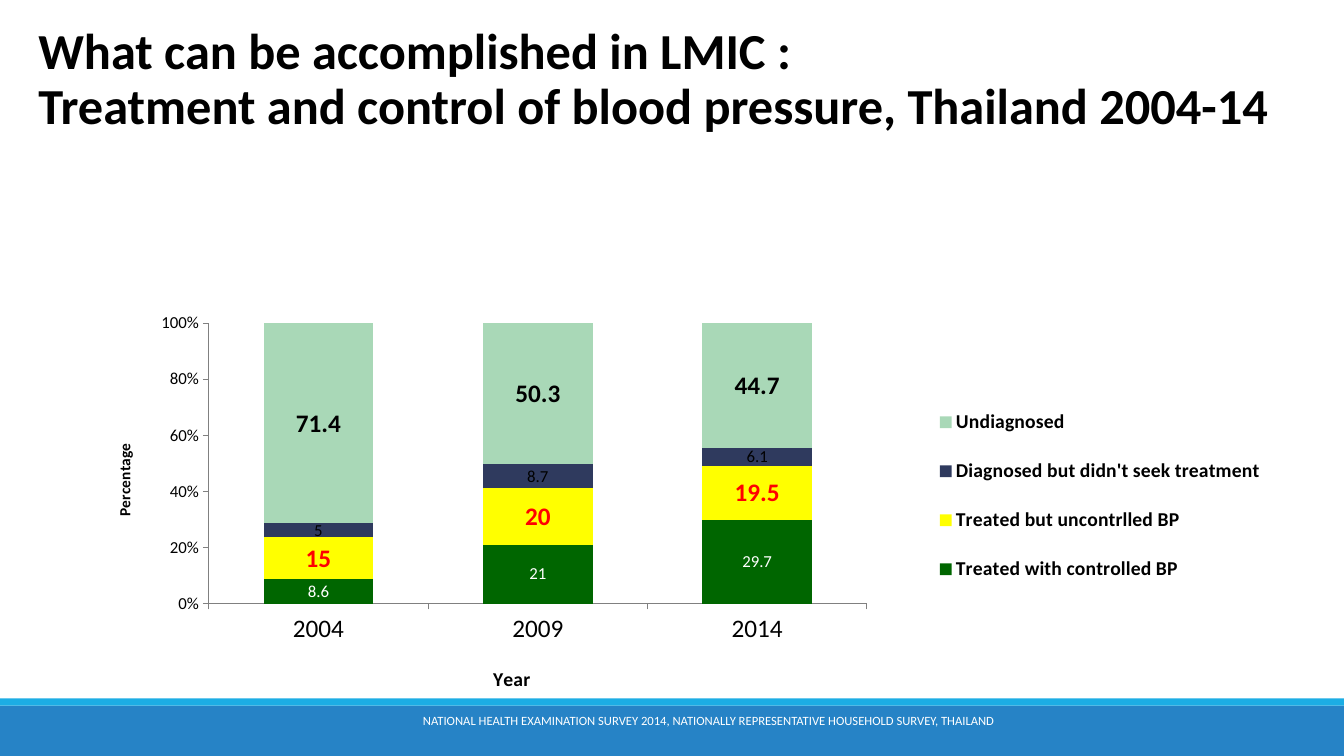
from dataclasses import dataclass
from lxml.etree import SubElement
from pptx import Presentation
from pptx.chart.data import CategoryChartData
from pptx.dml.color import RGBColor
from pptx.enum.chart import XL_CHART_TYPE as ChartType, XL_LEGEND_POSITION as LegendPosition
from pptx.enum.chart import XL_LABEL_POSITION as LabelPosition, XL_TICK_MARK as TickMark
from pptx.enum.shapes import MSO_SHAPE as ShapeKind
from pptx.enum.text import MSO_ANCHOR as Anchor, MSO_AUTO_SIZE as AutoSize, PP_ALIGN as Align
from pptx.oxml.ns import qn
from pptx.util import Inches, Pt


@dataclass(frozen=True)
class Theme:
    font: str = "Calibri"
    text: str = "000000"
    light: str = "FFFFFF"
    band: str = "2683C6"
    stripe: str = "1CADE4"
    axis: str = "808080"
    alert: str = "FF0000"
    controlled: str = "006600"
    uncontrolled: str = "FFFF00"
    untreated: str = "2F3A5E"
    undiagnosed: str = "A9D8B7"
    title_size: int = 36
    large: int = 18
    medium: int = 14
    small: int = 12
    axis_title: int = 11
    footer: int = 9


THEME = Theme()
WIDTH, HEIGHT = 13.33, 7.5
TITLE_BOX = (0.28, 0.21, 12.47, 1.36)
CHART_BOX = (0.86, 2.03, 12.11, 4.98)
FOOTER_BOX = (0, 6.93, WIDTH, 0.57)
TITLE_LINES = ("What can be accomplished in LMIC :",
               "Treatment and control of blood pressure, Thailand 2004-14")
SOURCE = "NATIONAL HEALTH EXAMINATION SURVEY 2014, NATIONALLY REPRESENTATIVE HOUSEHOLD SURVEY, THAILAND"
YEARS = ("2004", "2009", "2014")
SERIES = (
    ("Treated with controlled BP", (8.6, 21, 29.7), THEME.controlled, THEME.small, THEME.light, False),
    ("Treated but uncontrlled BP", (15, 20, 19.5), THEME.uncontrolled, THEME.large, THEME.alert, True),
    ("Diagnosed but didn't seek treatment", (5, 8.7, 6.1), THEME.untreated, THEME.small, THEME.text, False),
    ("Undiagnosed", (71.4, 50.3, 44.7), THEME.undiagnosed, THEME.large, THEME.text, True),
)


def apply_format(target, values):
    for name, value in values.items():
        setattr(target, name, value)


def style_font(font, size, color=THEME.text, bold=False):
    apply_format(font, {"name": THEME.font, "size": Pt(size), "bold": bold})
    font.color.rgb = RGBColor.from_string(color)


def paint(fill, color):
    fill.solid()
    fill.fore_color.rgb = RGBColor.from_string(color)


def set_layout(element, index, inner=False, **shares):
    for old in element.findall(qn("c:layout")):
        element.remove(old)
    layout = SubElement(element, qn("c:layout"))
    element.insert(index, layout)
    manual = SubElement(layout, qn("c:manualLayout"))
    values = {"layoutTarget": "inner"} if inner else {}
    values.update(xMode="edge", yMode="edge", **shares)
    for name, value in values.items():
        SubElement(manual, qn(f"c:{name}")).set("val", str(value))


def add_title(slide, box):
    title = slide.shapes.title
    apply_format(title, dict(zip(("left", "top", "width", "height"), map(Inches, box))))
    frame = title.text_frame
    frame.text = "\n".join(TITLE_LINES)
    apply_format(frame, {"auto_size": AutoSize.NONE, "word_wrap": True, "vertical_anchor": Anchor.TOP})
    for paragraph in frame.paragraphs:
        apply_format(paragraph, {"alignment": Align.LEFT, "line_spacing": 0.9, "space_before": Pt(0)})
        style_font(paragraph.runs[0].font, THEME.title_size, bold=True)


def add_footer(slide, box):
    left, top, width, height = box
    stripe_height = 0.07
    bands = ((top + stripe_height, height - stripe_height, THEME.band),
             (top, stripe_height, THEME.stripe))
    for band_top, band_height, color in bands:
        shape = slide.shapes.add_shape(
            ShapeKind.RECTANGLE, *map(Inches, (left, band_top, width, band_height)))
        shape.shadow.inherit = False
        paint(shape.fill, color)
        shape.line.fill.background()
    label = slide.shapes.add_textbox(*map(Inches, (left + 3.43, top + 0.02, 7.19, 0.4)))
    frame = label.text_frame
    apply_format(frame, {"word_wrap": True, "vertical_anchor": Anchor.MIDDLE, "text": SOURCE})
    paragraph = frame.paragraphs[0]
    paragraph.alignment = Align.CENTER
    style_font(paragraph.runs[0].font, THEME.footer, THEME.light)


def style_axis(axis, name, name_size, tick_size, **shares):
    apply_format(axis, {"has_major_gridlines": False, "major_tick_mark": TickMark.OUTSIDE,
                        "minor_tick_mark": TickMark.NONE})
    style_font(axis.tick_labels.font, tick_size)
    axis.format.line.width = Pt(0.75)
    axis.format.line.color.rgb = RGBColor.from_string(THEME.axis)
    axis.axis_title.text_frame.text = name
    style_font(axis.axis_title.text_frame.paragraphs[0].runs[0].font, name_size, bold=True)
    set_layout(axis.axis_title._element, 1, **shares)


def add_treatment_chart(slide, box):
    data = CategoryChartData()
    data.categories = YEARS
    for name, values, *_ in SERIES:
        data.add_series(name, values)
    chart = slide.shapes.add_chart(ChartType.COLUMN_STACKED_100, *map(Inches, box), data).chart
    apply_format(chart, {"has_title": False, "has_legend": True})
    style_font(chart.font, THEME.large)
    plot = chart.plots[0]
    apply_format(plot, {"gap_width": 100, "overlap": 100, "vary_by_categories": False})
    for series, (_, _, color, size, label_color, bold) in zip(plot.series, SERIES):
        paint(series.format.fill, color)
        labels = series.data_labels
        apply_format(labels, {"show_value": True, "position": LabelPosition.CENTER})
        style_font(labels.font, size, label_color, bold)
    style_axis(chart.category_axis, "Year", THEME.medium, THEME.large, x=0.33, y=0.91)
    style_axis(chart.value_axis, "Percentage", THEME.axis_title, THEME.small, x=0.02, y=0.47)
    apply_format(chart.value_axis, {"minimum_scale": 0, "maximum_scale": 1, "major_unit": 0.2})
    apply_format(chart.value_axis.tick_labels, {"number_format": "0%", "number_format_is_linked": False})
    apply_format(chart.legend, {"position": LegendPosition.RIGHT, "include_in_layout": False})
    style_font(chart.legend.font, THEME.medium, bold=True)
    set_layout(chart.legend._element, 1, x=0.68, y=0.36, w=0.3, h=0.44)
    plot_area = chart._chartSpace.find(f".//{qn('c:plotArea')}")
    set_layout(plot_area, 0, inner=True, x=0.1, y=0.236, w=0.539, h=0.559)


def main():
    presentation = Presentation()
    apply_format(presentation, {"slide_width": Inches(WIDTH), "slide_height": Inches(HEIGHT)})
    slide = presentation.slides.add_slide(presentation.slide_layouts[5])
    paint(slide.background.fill, THEME.light)
    add_footer(slide, FOOTER_BOX)
    add_treatment_chart(slide, CHART_BOX)
    add_title(slide, TITLE_BOX)
    presentation.save("out.pptx")


if __name__ == "__main__":
    main()
